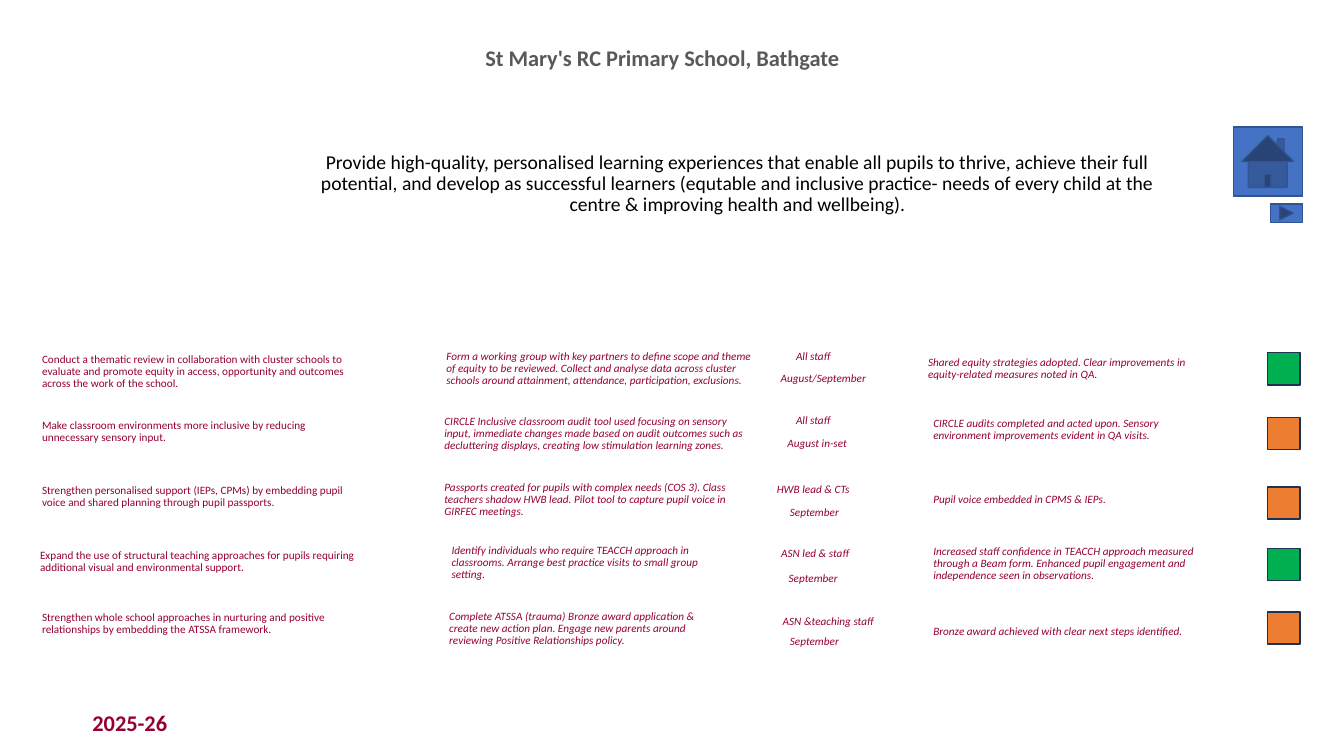
from collections import namedtuple

from pptx import Presentation
from pptx import util as u
from pptx.dml.color import RGBColor
from pptx.enum import shapes, text

COLORS = {
    "title": "595959", "aim": "000000", "plan": "950032",
    "button": "4472C4", "button_line": "325491",
    "green": "00B050", "amber": "ED7D31", "status_line": "1E3256",
}

# Part of an action: wording, left and top within the row, width
Part = namedtuple("Part", "words left top width")

GOAL_LEFT, GOAL_WIDTH = 0.81, 8.48
WHO_LEFT, WHO_WIDTH = 19.3, 2.39
OUTCOME_LEFT, OUTCOME_WIDTH = 23.27, 7.42
STATUS_LEFT, STATUS_SIZE = 31.95, 0.81

# Each action: row top, status colour, goal, steps, who, when, outcome
ACTIONS = [
    (8.89, "green",
     Part("Conduct a thematic review in collaboration with cluster schools to evaluate and promote "
          "equity in access, opportunity and outcomes across the work of the school.",
          GOAL_LEFT, -0.1, GOAL_WIDTH),
     Part("Form a working group with key partners to define scope and theme of equity to be "
          "reviewed. Collect and analyse data across cluster schools around attainment, "
          "attendance, participation, exclusions.", 11, -0.18, 8.23),
     Part("All staff", WHO_LEFT, -0.18, WHO_WIDTH),
     Part("August/September", 19.33, 0.38, 2.84),
     Part("Shared equity strategies adopted. Clear improvements in equity-related measures "
          "noted in QA.", 23.14, -0.03, OUTCOME_WIDTH)),
    (10.52, "amber",
     Part("Make classroom environments more inclusive by reducing unnecessary sensory input.",
          GOAL_LEFT, -0.06, GOAL_WIDTH),
     Part("CIRCLE Inclusive classroom audit tool used focusing on sensory input, immediate "
          "changes made based on audit outcomes such as decluttering displays, creating low "
          "stimulation learning zones.", 10.95, -0.16, 8.23),
     Part("All staff", WHO_LEFT, -0.18, WHO_WIDTH),
     Part("August in-set", 19.02, 0.4, 3.15),
     Part("CIRCLE audits completed and acted upon. Sensory environment improvements evident "
          "in QA visits.", OUTCOME_LEFT, -0.11, OUTCOME_WIDTH)),
    (12.27, "amber",
     Part("Strengthen personalised support (IEPs, CPMs) by embedding pupil voice and shared "
          "planning through pupil passports.", GOAL_LEFT, -0.18, GOAL_WIDTH),
     Part("Passports created for pupils with complex needs (COS 3). Class teachers shadow HWB "
          "lead. Pilot tool to capture pupil voice in GIRFEC meetings.", 10.95, -0.26, 7.75),
     Part("HWB lead & CTs", WHO_LEFT, -0.2, WHO_WIDTH),
     Part("September", 19.33, 0.38, WHO_WIDTH),
     Part("Pupil voice embedded in CPMS & IEPs.", OUTCOME_LEFT, 0.05, OUTCOME_WIDTH)),
    (13.82, "green",
     Part("Expand the use of structural teaching approaches for pupils requiring additional "
          "visual and environmental support.", 0.76, -0.1, 8.97),
     Part("Identify individuals who require TEACCH approach in classrooms. Arrange best "
          "practice visits to small group setting.", 11.13, -0.21, 7.42),
     Part("ASN led & staff", 19.35, -0.13, WHO_WIDTH),
     Part("September", WHO_LEFT, 0.48, WHO_WIDTH),
     Part("Increased staff confidence in TEACCH approach measured through a Beam form. Enhanced "
          "pupil engagement and independence seen in observations.",
          OUTCOME_LEFT, -0.18, OUTCOME_WIDTH)),
    (15.42, "amber",
     Part("Strengthen whole school approaches in nurturing and positive relationships by "
          "embedding the ATSSA framework.", GOAL_LEFT, -0.13, GOAL_WIDTH),
     Part("Complete ATSSA (trauma) Bronze award application & create new action plan. Engage "
          "new parents around reviewing Positive Relationships policy.", 11.07, -0.15, 7.42),
     Part("ASN &teaching staff", WHO_LEFT, -0.03, 3.15),
     Part("September", 19.33, 0.48, WHO_WIDTH),
     Part("Bronze award achieved with clear next steps identified.",
          OUTCOME_LEFT, 0.23, OUTCOME_WIDTH)),
]


def add_text(slide, words, left, top, width, height, size=8, color="plan", bold=False,
             italic=False, centred=False, side_inset=0.25, anchor=text.MSO_ANCHOR.TOP):
    frame = slide.shapes.add_textbox(u.Cm(left), u.Cm(top), u.Cm(width), u.Cm(height)).text_frame
    frame.word_wrap = True
    frame.vertical_anchor = anchor
    frame.margin_left = frame.margin_right = u.Cm(side_inset)
    paragraph = frame.paragraphs[0]
    paragraph.alignment = text.PP_ALIGN.CENTER if centred else text.PP_ALIGN.LEFT
    paragraph.line_spacing = 0.9
    run = paragraph.add_run()
    run.text = words
    font = run.font
    font.name, font.size, font.bold, font.italic = "Calibri", u.Pt(size), bold, italic
    font.color.rgb = RGBColor.from_string(COLORS[color])


def add_block(slide, kind, left, top, width, height, fill, line):
    block = slide.shapes.add_shape(kind, u.Cm(left), u.Cm(top), u.Cm(width), u.Cm(height))
    block.shadow.inherit = False
    block.fill.solid()
    block.fill.fore_color.rgb = RGBColor.from_string(COLORS[fill])
    block.line.color.rgb = RGBColor.from_string(COLORS[line])
    block.line.width = u.Pt(1)


def navigation(slide, left, top, size):
    """Home button with a small next button under its right edge."""
    next_width = 0.8
    add_block(slide, shapes.MSO_SHAPE.ACTION_BUTTON_HOME, left, top, size, size,
              "button", "button_line")
    add_block(slide, shapes.MSO_SHAPE.ACTION_BUTTON_FORWARD_OR_NEXT, left + size - next_width,
              top + size + 0.2, next_width, 0.46, "button", "button_line")


def header(slide, left, top, width):
    """School name with the improvement aim below it."""
    add_text(slide, "St Mary's RC Primary School, Bathgate", left, top, width, 0.79, size=16,
             color="title", bold=True, centred=True, anchor=text.MSO_ANCHOR.BOTTOM)
    add_text(slide, "Provide high-quality, personalised learning experiences that enable all "
             "pupils to thrive, achieve their full potential, and develop as successful learners "
             "(equtable and inclusive practice- needs of every child at the centre & improving "
             "health and wellbeing).", left + 0.79, top + 2.57, width + 2.21, 1.78, size=14,
             color="aim", centred=True)


def action_row(slide, left, top, status, goal, steps, who, when, outcome):
    """One action of the plan, ending in its status square."""
    def place(part, height, **style):
        add_text(slide, part.words, left + part.left, top + part.top, part.width, height, **style)

    place(goal, 0.84)
    place(steps, 1.4, italic=True)
    for part in (who, when):
        place(part, 0.53, italic=True, centred=True, side_inset=0)
    place(outcome, 1.3, italic=True)
    add_block(slide, shapes.MSO_SHAPE.RECTANGLE, left + STATUS_LEFT, top, STATUS_SIZE,
              STATUS_SIZE, status, "status_line")


def main():
    deck = Presentation()
    deck.slide_width, deck.slide_height = u.Cm(33.87), u.Cm(19.05)
    slide = deck.slides.add_slide(deck.slide_layouts[6])

    navigation(slide, 31.08, 3.2, 1.74)
    header(slide, 6.98, 1.14, 19.43)
    for top, *parts in ACTIONS:
        action_row(slide, 0, top, *parts)
    # School session
    add_text(slide, "2025-26", 2.08, 17.83, 3.45, 0.84, size=16, bold=True)

    deck.save("out.pptx")


if __name__ == "__main__":
    main()
